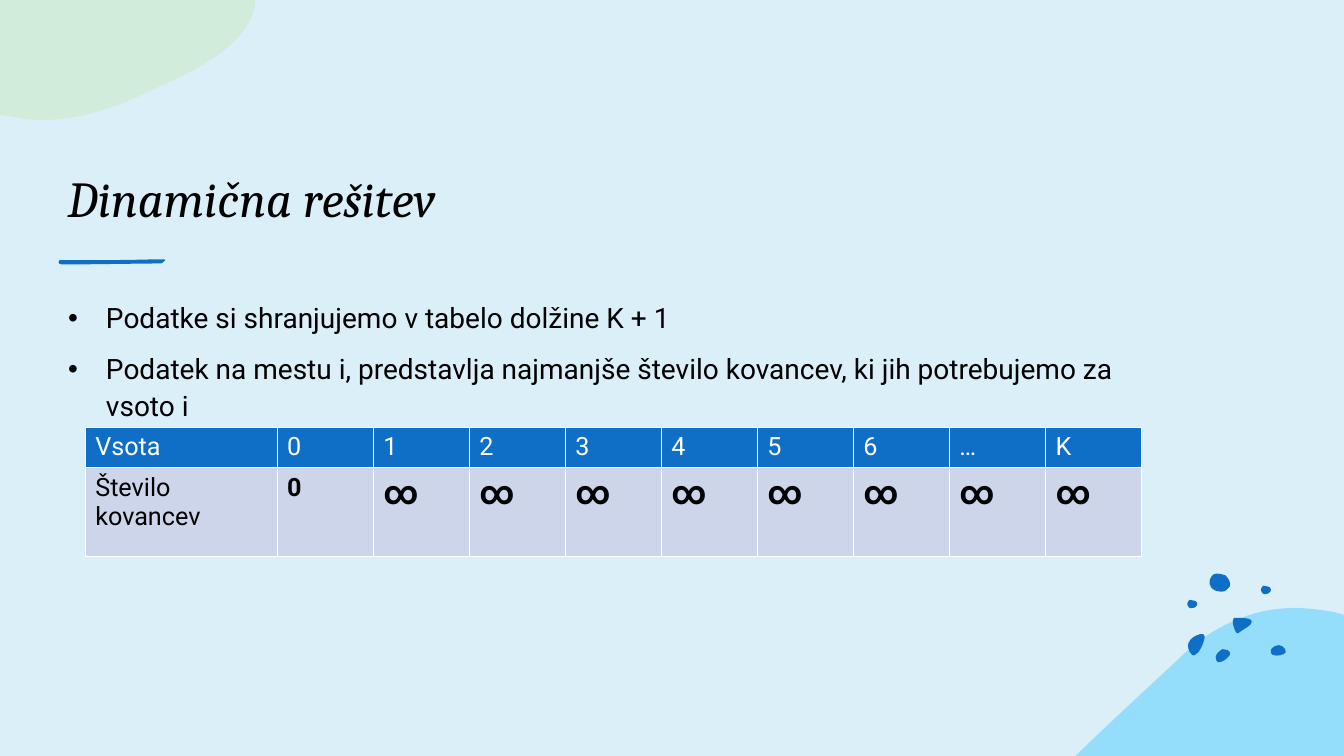
from lxml import etree
from pptx import Presentation
from pptx.dml.color import RGBColor
from pptx.enum.text import MSO_ANCHOR
from pptx.oxml.ns import qn
from pptx.util import Pt

BOTTOM = MSO_ANCHOR.BOTTOM
BLUE, BLACK, WHITE = "0F6FC6", "000000", "FFFFFF"


def color(fill, value):
    fill.solid()
    fill.fore_color.rgb = RGBColor.from_string(value)


def blob(outline, fill, alpha=None, dx=0, dy=0):
    """Draw a closed outline: pairs are corners, sextuples are cubic curves."""
    points = [(Pt(part[k] + dx), Pt(part[k + 1] + dy))
              for part in outline for k in range(0, len(part), 2)]
    builder = s.shapes.build_freeform(*points[0])
    builder.add_line_segments(points[1:], close=True)
    sp = builder.convert_to_shape()
    sp.shadow.inherit = False
    sp.line.fill.background()
    color(sp.fill, fill)
    if alpha:
        clr = sp._element.spPr.find(qn("a:solidFill"))[0]
        etree.SubElement(clr, qn("a:alpha"), val=str(alpha * 1000))
    # Merge each run of three line segments into one curve
    segments = iter(list(sp._element.iter(qn("a:lnTo"))))
    for part in outline[1:]:
        first = next(segments)
        if len(part) == 6:
            curve = etree.Element(qn("a:cubicBezTo"))
            first.addprevious(curve)
            for segment in (first, next(segments), next(segments)):
                curve.append(segment[0])
                segment.getparent().remove(segment)


prs = Presentation()
prs.slide_width, prs.slide_height = Pt(960), Pt(540)
s = prs.slides.add_slide(prs.slide_layouts[6])
color(s.background.fill, "DBEFF9")

# Corner shapes
hill = [(927.4, 434.2), (936.7, 434.9, 946.1, 435.6, 955.4, 437.8),
        (960, 439.2), (960, 540), (768.2, 540), (769, 539.3),
        (793.4, 515.5, 818.6, 492.5, 841.7, 470.9),
        (857.5, 455, 874.1, 445.7, 890.6, 439.9),
        (902.9, 435.6, 915.1, 434.2, 927.4, 434.2)]
leaf = [(0, 0), (182.2, 0), (182.2, 4.3), (176.4, 31.7, 144, 48.2, 113.8, 61.9),
        (88.6, 74.2, 61.9, 85.7, 29.5, 85.7), (22.3, 85.7, 15.8, 85, 9.4, 83.5),
        (0, 82.1)]
blob(hill, "4FCEFF", 50)

# Blue spots
spots = [
    [(873.4, 463.7), (874.8, 463.7, 875.5, 463.7, 877, 464.4),
     (878.4, 465.1, 879.1, 466.6, 878.4, 468), (877, 470.2, 872.6, 473.8, 869.8, 473),
     (869, 472.3, 868.3, 470.9, 868.3, 469.4), (868.3, 468, 869.8, 465.8, 871.2, 465.1),
     (871.9, 464.4, 872.6, 463.7, 873.4, 463.7)],
    [(857.5, 452.9), (859, 452.9, 860.4, 452.9, 860.4, 454.3),
     (860.4, 455, 860.4, 455, 860.4, 455.8),
     (859.7, 459.4, 858.2, 463, 856.1, 465.8), (854.6, 467.3, 852.5, 469.4, 851, 467.3),
     (848.9, 465.1, 848.2, 461.5, 848.9, 459.4), (849.6, 457.2, 851, 456.5, 852.5, 455),
     (853.2, 455, 855.4, 452.9, 857.5, 452.9)],
    [(913.7, 460.8), (915.1, 460.8, 917.3, 462.2, 918, 463.7),
     (918.7, 465.1, 918.7, 466.6, 916.6, 467.3), (914.4, 468.7, 908.6, 468.7, 907.9, 466.6),
     (907.2, 465.1, 907.9, 463.7, 908.6, 463), (910.1, 461.5, 911.5, 460.8, 913.7, 460.8)],
    [(864.7, 418.3), (864, 418.3, 863.3, 414, 865.4, 411.8),
     (866.9, 410.4, 866.9, 409.7, 869, 409.7), (871.2, 409.7, 874.1, 410.4, 875.5, 411.1),
     (877, 412.6, 879.8, 416.2, 878.4, 419), (876.2, 421.2, 875.5, 422.6, 872.6, 422.6),
     (870.5, 422.6, 866.9, 421.9, 866.2, 420.5), (864.7, 419.8, 864.7, 419, 864.7, 418.3)],
    [(884.2, 441.4), (888.5, 441.4, 896.4, 441.4, 893.5, 445.7),
     (893.5, 446.4, 892.8, 447.1, 892.1, 447.1), (889.9, 448.6, 887.8, 450, 885.6, 451.4),
     (884.9, 452.2, 884.2, 452.9, 883.4, 452.2), (883.4, 452.2, 882.7, 451.4, 882.7, 451.4),
     (881.3, 448.6, 880.6, 446.4, 880.6, 443.5), (880.6, 442.8, 880.6, 442.1, 881.3, 441.4)],
]
for spot in spots:
    blob(spot, BLUE)
dot = [(900.7, 421.9), (900.7, 421.9, 900.7, 419, 902.2, 418.3),
       (903.6, 418.3, 904.3, 418.3, 905.8, 419), (906.5, 419, 907.9, 419.8, 907.9, 421.2),
       (907.9, 421.9, 907.2, 423.4, 906.5, 423.4), (906.5, 423.4, 906.5, 424.1, 905, 424.1),
       (904.3, 424.1, 902.9, 424.8, 902.2, 424.1), (901.4, 422.6, 900.7, 422.6, 900.7, 421.9)]
for dx, dy in [(0, 0), (-52.6, 10.1)]:
    blob(dot, BLUE, dx=dx, dy=dy)
blob(leaf, "CBEAC0", 50)

# Brush stroke under the title
stroke = [(42.5, 185.8), (54, 185.8), (80, 185.8), (95.8, 185.6), (113, 185.2),
          (117.4, 185.2), (118.1, 185.8), (116, 186.5, 117.4, 188.6, 113, 188.2),
          (95.8, 188.4), (61.9, 188.8), (43.9, 188.8),
          (41, 188.6, 41.8, 186.5, 42.5, 185.8)]
blob(stroke, BLUE)

# Title
tf = s.shapes.add_textbox(Pt(41.3), Pt(62), Pt(793.4), Pt(104.4)).text_frame
tf.word_wrap = True
tf.vertical_anchor = BOTTOM
r = tf.paragraphs[0].add_run()
r.text = "Dinamična rešitev"
r.font.name, r.font.size, r.font.italic = "Cambria", Pt(36), True
color(r.font.fill, BLACK)

# Bullets
tf = s.shapes.add_textbox(Pt(41.6), Pt(208.8), Pt(793.4), Pt(104.4)).text_frame
tf.word_wrap = True
bullets = ["Podatke si shranjujemo v tabelo dolžine K + 1",
           "Podatek na mestu i, predstavlja najmanjše število kovancev, "
           "ki jih potrebujemo za vsoto i"]
for i, text in enumerate(bullets):
    p = tf.add_paragraph() if i else tf.paragraphs[0]
    p.line_spacing, p.space_before = 1.1, Pt(10)
    pPr = p._p.get_or_add_pPr()
    pPr.set("marL", str(Pt(27)))
    pPr.set("indent", str(-Pt(27)))
    etree.SubElement(pPr, qn("a:buFont"), typeface="Arial")
    etree.SubElement(pPr, qn("a:buChar"), char="•")
    r = p.add_run()
    r.text = text
    r.font.name, r.font.size = "Roboto", Pt(20)
    color(r.font.fill, BLACK)

# Table of sums and coin counts
rows = [["Vsota", *"0123456", "…", "K"],
        ["Število kovancev", "0"] + ["∞"] * 8]
table = s.shapes.add_table(2, 10, Pt(60.9), Pt(305.3), Pt(754.5), Pt(91.6)).table
for j, column in enumerate(table.columns):
    column.width = Pt(68.6 if j else 137.1)
for row, height in zip(table.rows, (28, 63.6)):
    row.height = Pt(height)
for i, texts in enumerate(rows):
    for j, text in enumerate(texts):
        cell = table.cell(i, j)
        tcPr = cell._tc.get_or_add_tcPr()
        for side in "LRTB":
            ln = etree.SubElement(tcPr, qn("a:ln" + side), w=str(Pt(1)))
            line_fill = etree.SubElement(ln, qn("a:solidFill"))
            etree.SubElement(line_fill, qn("a:srgbClr"), val=WHITE)
        color(cell.fill, "CCD5EA" if i else BLUE)
        r = cell.text_frame.paragraphs[0].add_run()
        r.text = text
        r.font.name, r.font.size = "Roboto", Pt(24 if text == "∞" else 18)
        r.font.bold = i == 1 and j > 0
        color(r.font.fill, BLACK if i else WHITE)

prs.save("out.pptx")
